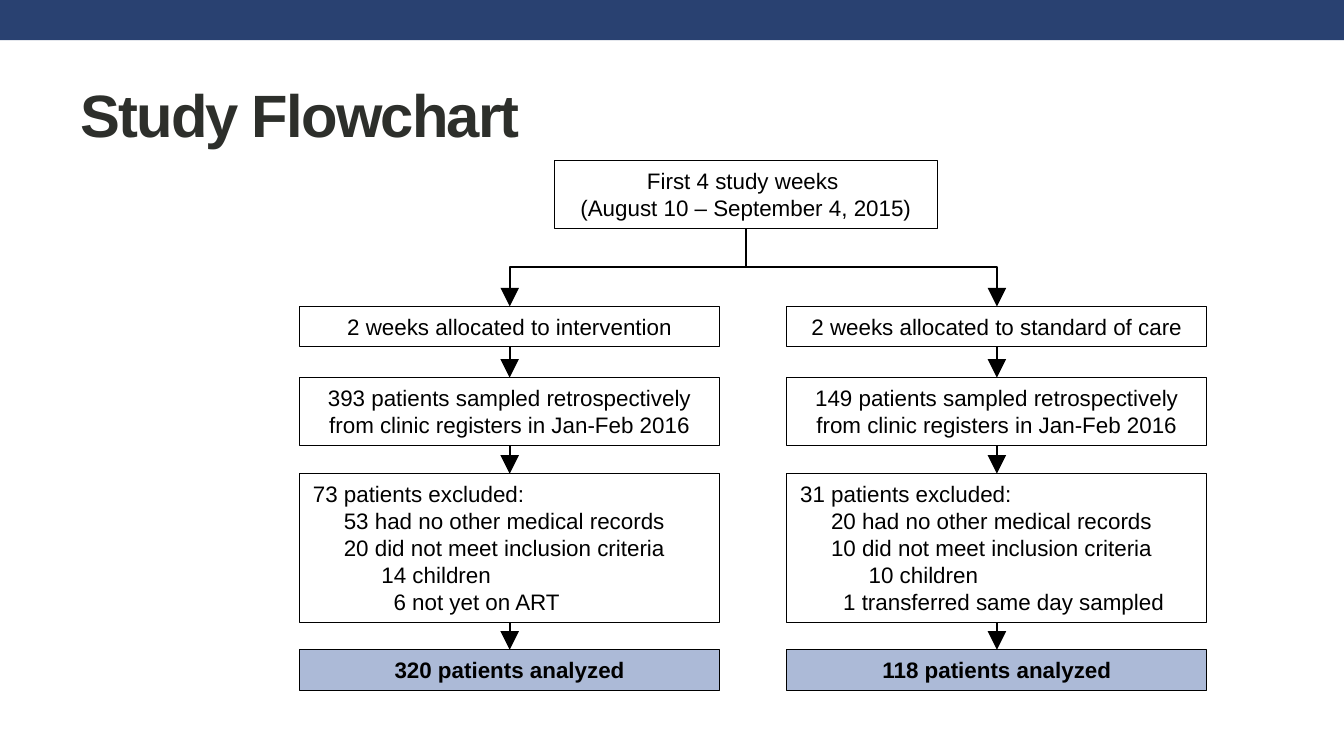
from lxml.etree import SubElement
from pptx import Presentation
from pptx.dml.color import RGBColor
from pptx.enum.shapes import MSO_CONNECTOR, MSO_SHAPE
from pptx.enum.text import MSO_ANCHOR, MSO_AUTO_SIZE, PP_ALIGN
from pptx.oxml.ns import qn
from pptx.util import Inches, Pt

NAVY = RGBColor(0x29, 0x41, 0x71)
PALE = RGBColor(0xAC, 0xBA, 0xD7)
INK = RGBColor(0x2D, 0x2F, 0x2B)
BLACK = RGBColor(0, 0, 0)

COLUMNS = 100
WIDTH = Inches(10)
UNIT = WIDTH / COLUMNS
ARM_HEIGHTS = (3, 5.05, 11.1, 3)
ARM_GAPS = (2.3, 2.1, 2, 0)

ARMS = (
    (
        "2 weeks allocated to intervention",
        "393 patients sampled retrospectively from clinic registers in Jan-Feb 2016",
        (("73 patients excluded:", 0),
         ("53 had no other medical records", 2.3),
         ("20 did not meet inclusion criteria", 2.3),
         ("14 children", 5.1),
         ("6 not yet on ART", 6)),
        "320 patients analyzed",
    ),
    (
        "2 weeks allocated to standard of care",
        "149 patients sampled retrospectively from clinic registers in Jan-Feb 2016",
        (("31 patients excluded:", 0),
         ("20 had no other medical records", 2.3),
         ("10 did not meet inclusion criteria", 2.3),
         ("10 children", 5.1),
         ("1 transferred same day sampled", 3.2)),
        "118 patients analyzed",
    ),
)


def grid(*values):
    """Convert grid units to slide lengths."""
    return [round(v * UNIT) for v in values]


def add_text(tf, text, size=12, bold=False, color=BLACK, align=PP_ALIGN.CENTER,
             indent=0, tracking=None):
    """Write one formatted paragraph into a text frame."""
    p = tf.paragraphs[0] if not tf.text else tf.add_paragraph()
    p.alignment = align
    if indent:
        pPr = p._p.get_or_add_pPr()
        pPr.set("marL", str(grid(indent)[0]))
        pPr.set("indent", "0")
    r = p.add_run()
    r.text = text
    r.font.name = "Arial"
    r.font.size = Pt(size)
    r.font.bold = bold
    r.font.color.rgb = color
    if tracking:
        r._r.get_or_add_rPr().set("spc", str(tracking * 100))


def add_box(slide, box, fill=None, line=BLACK):
    """Draw a rectangle and return its text frame."""
    sp = slide.shapes.add_shape(MSO_SHAPE.RECTANGLE, *grid(*box))
    sp.shadow.inherit = False
    if fill is None:
        sp.fill.background()
    else:
        sp.fill.solid()
        sp.fill.fore_color.rgb = fill
    if line is None:
        sp.line.fill.background()
    else:
        sp.line.color.rgb = line
        sp.line.width = Pt(0.5)
    tf = sp.text_frame
    tf.word_wrap = True
    tf.vertical_anchor = MSO_ANCHOR.TOP
    return tf


def add_arrow(slide, x1, y1, x2, y2):
    """Draw a downward arrow, bent halfway when its ends are offset."""
    dx, dy = x2 - x1, y2 - y1
    kind, ends = MSO_CONNECTOR.STRAIGHT, (x1, y1, x2, y2)
    if dx:
        cx, cy = (x1 + x2) / 2, (y1 + y2) / 2
        half = dy / 2 if dx > 0 else -dy / 2
        kind = MSO_CONNECTOR.ELBOW
        ends = (cx + half, cy - abs(dx) / 2, cx - half, cy + abs(dx) / 2)
    c = slide.shapes.add_connector(kind, *grid(*ends))
    c.line.color.rgb = BLACK
    c.line.width = Pt(1)
    spPr = c._element.spPr
    if dx:
        angle = 270 if dx > 0 else 90
        spPr.find(qn("a:xfrm")).set("rot", str(angle * 60000))
    SubElement(spPr.find(qn("a:ln")), qn("a:tailEnd"),
               type="triangle", w="lg", len="lg")
    SubElement(spPr, qn("a:effectLst"))


def add_header(slide, box):
    """Place the top band and the title below it."""
    left, top, width, height = box
    add_box(slide, (left, top, width, 3), fill=NAVY, line=None)
    tf = slide.shapes.add_textbox(
        *grid(left + 5, top + 4.4, width - 10, height - 4.4)).text_frame
    tf.word_wrap = True
    tf.vertical_anchor = MSO_ANCHOR.MIDDLE
    add_text(tf, "Study Flowchart", size=32, bold=True, color=INK,
             align=PP_ALIGN.LEFT, tracking=-1)


def add_arm(slide, box, steps):
    """Stack the steps of one study arm, joined by arrows."""
    left, top, width, _ = box
    middle = left + width / 2
    for i, (step, height, gap) in enumerate(zip(steps, ARM_HEIGHTS, ARM_GAPS)):
        last = i == len(steps) - 1
        tf = add_box(slide, (left, top, width, height), fill=PALE if last else None)
        tf.auto_size = MSO_AUTO_SIZE.SHAPE_TO_FIT_TEXT
        if isinstance(step, str):
            add_text(tf, step, bold=last)
        else:
            for text, indent in step:
                add_text(tf, text, align=PP_ALIGN.LEFT, indent=indent)
        top += height
        if not last:
            add_arrow(slide, middle, top, middle, top + gap)
        top += gap


def add_flowchart(slide, box):
    """Place the starting box and the two arms branching from it."""
    left, top, width, height = box
    arm_width, arm_drop = 31.25, 10.85
    start = (left + 18.95, top, 28.5, 5.05)
    tf = add_box(slide, start)
    tf.auto_size = MSO_AUTO_SIZE.SHAPE_TO_FIT_TEXT
    add_text(tf, "First 4 study weeks ")
    add_text(tf, "(August 10 – September 4, 2015)")
    for arm_left, steps in zip((left, left + width - arm_width), ARMS):
        add_arrow(slide, start[0] + start[2] / 2, top + start[3],
                  arm_left + arm_width / 2, top + arm_drop)
        add_arm(slide, (arm_left, top + arm_drop, arm_width, height - arm_drop), steps)


def main():
    """Build and save the slide."""
    prs = Presentation()
    prs.slide_width, prs.slide_height = WIDTH, WIDTH * 9 // 16
    slide = prs.slides.add_slide(prs.slide_layouts[6])
    add_header(slide, (0, 0, COLUMNS, 12.5))
    add_flowchart(slide, (22.3, 11.95, 67.5, 39.4))
    prs.save("out.pptx")


if __name__ == "__main__":
    main()
